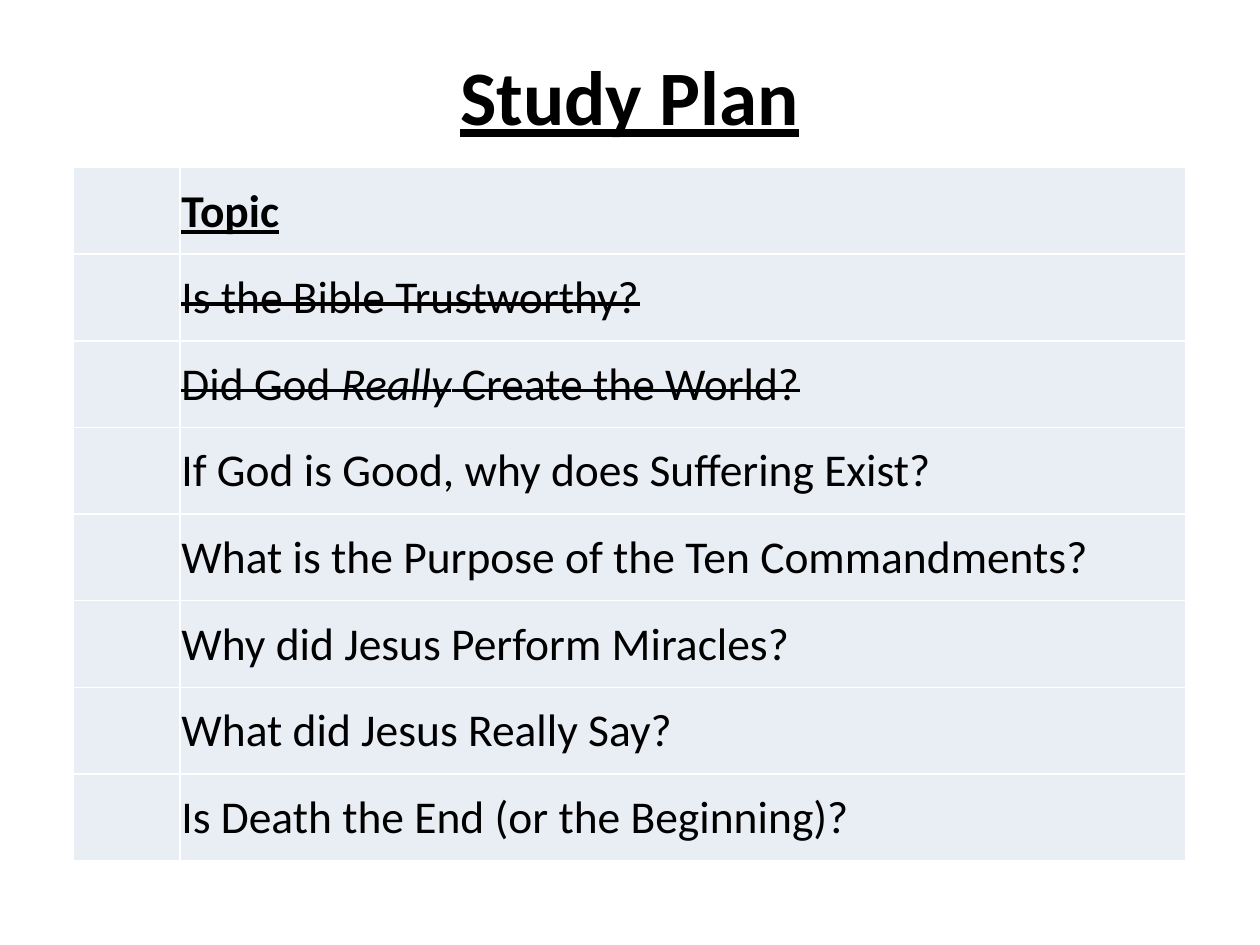
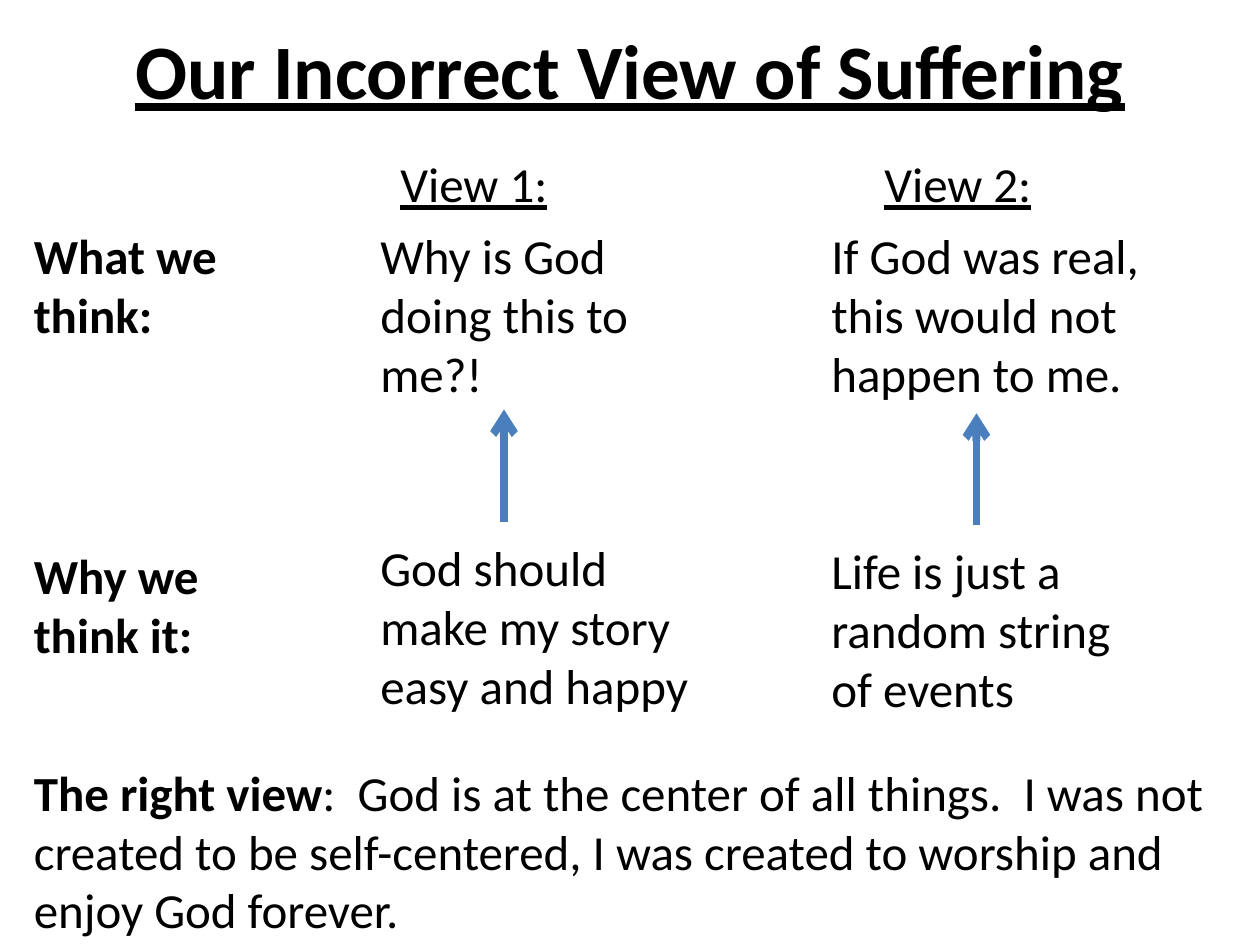
from lxml import etree
from pptx import Presentation
from pptx.dml.color import RGBColor
from pptx.enum.shapes import MSO_CONNECTOR
from pptx.enum.text import MSO_ANCHOR, MSO_AUTO_SIZE, PP_ALIGN
from pptx.oxml.ns import qn
from pptx.util import Inches, Pt

FONT = "Calibri"
BLACK, WHITE, CELL_FILL, ARROW_BLUE = "000000", "FFFFFF", "E9EDF4", "4B7EBC"
PLAIN = {"bold": False, "underline": False, "italic": False}
BOLD = PLAIN | {"bold": True}
UNDERLINED = PLAIN | {"underline": True}
HEADING = PLAIN | {"bold": True, "underline": True}
ITALIC = PLAIN | {"italic": True}


def color(hex_value):
    return RGBColor.from_string(hex_value)


def write(frame, size, runs, struck=False):
    for words, style in runs:
        run = frame.paragraphs[0].add_run()
        run.text = words
        for key, value in (style | {"name": FONT, "size": Pt(size)}).items():
            setattr(run.font, key, value)
        run.font.color.rgb = color(BLACK)
        if struck:
            run.font._element.set("strike", "sngStrike")


deck = Presentation()
deck.slide_width, deck.slide_height = Inches(10), Inches(7.5)

# Titles: the same style on both slides
slides = []
for heading, place in [
    ("Study Plan", (2.75, 0.25, 4.5, 1)),
    ("Our Incorrect View of Suffering", (0.5, -0.08, 9, 1.25)),
]:
    slide = deck.slides.add_slide(deck.slide_layouts[5])
    title = slide.shapes.title
    title.left, title.top, title.width, title.height = map(Inches, place)
    title.text_frame.vertical_anchor = MSO_ANCHOR.MIDDLE
    title.text_frame.auto_size = MSO_AUTO_SIZE.NONE
    title.text_frame.paragraphs[0].alignment = PP_ALIGN.CENTER
    write(title.text_frame, 44, [(heading, HEADING)])
    slides.append(slide)
study_plan, suffering = slides

# Study plan: one topic per row, finished ones struck through
topics = [
    ([("Topic", HEADING)], False),
    ([("Is the Bible Trustworthy?", PLAIN)], True),
    ([("Did God ", PLAIN), ("Really", ITALIC), (" Create the World?", PLAIN)], True),
    ([("If God is Good, why does Suffering Exist?", PLAIN)], False),
    ([("What is the Purpose of the Ten Commandments?", PLAIN)], False),
    ([("Why did Jesus Perform Miracles?", PLAIN)], False),
    ([("What did Jesus Really Say?", PLAIN)], False),
    ([("Is Death the End (or the Beginning)?", PLAIN)], False),
]
plan = study_plan.shapes.add_table(
    len(topics), 2, Inches(0.58), Inches(1.33), Inches(8.83), Inches(5.5)).table
plan.first_row = plan.horz_banding = False
plan.columns[0].width, plan.columns[1].width = Inches(0.85), Inches(7.98)
for row, (runs, finished) in enumerate(topics):
    write(plan.cell(row, 1).text_frame, 26, runs, finished)

cell_format = {
    "vertical_anchor": MSO_ANCHOR.MIDDLE, "margin_left": Inches(0.01),
    "margin_right": Inches(0.01), "margin_top": Inches(0.01), "margin_bottom": 0,
}
for cell in plan.iter_cells():
    for key, value in cell_format.items():
        setattr(cell, key, value)
    cell.fill.solid()
    cell.fill.fore_color.rgb = color(CELL_FILL)
    properties = cell._tc.get_or_add_tcPr()
    for index, side in enumerate(("lnL", "lnR", "lnT", "lnB")):
        border = etree.Element(qn(f"a:{side}"), w=str(Pt(1)))
        paint = etree.SubElement(border, qn("a:solidFill"))
        etree.SubElement(paint, qn("a:srgbClr"), val=WHITE)
        properties.insert(index, border)

# Views of suffering: a label column and two view columns
LABELS, VIEW_1, VIEW_2 = 0.17, 2.92, 6.5
HEADS, THOUGHTS = 1.17, 1.74
passages = [
    (LABELS, THOUGHTS, 1.75, 1.04, [("What we think:", BOLD)]),
    (LABELS, 4.28, 1.75, 1.04, [("Why we think it:", BOLD)]),
    (VIEW_1, THOUGHTS, 2.25, 1.51, [("Why is God doing this to me?!", PLAIN)]),
    (VIEW_2, THOUGHTS, 2.67, 1.51, [("If God was real, this would not happen to me.", PLAIN)]),
    (VIEW_1, 4.22, 2.67, 1.51, [("God should make my story easy and happy", PLAIN)]),
    (VIEW_2, 4.24, 2.67, 1.51, [("Life is just a random string of events", PLAIN)]),
    (3.08, HEADS, 1.75, 0.57, [("View 1:", UNDERLINED)]),
    (6.92, HEADS, 1.75, 0.57, [("View 2:", UNDERLINED)]),
    (LABELS, 6, 9.58, 1.51, [
        ("The right view", BOLD),
        (":  God is at the center of all things.  I was not created to be "
         "self-centered, I was created to worship and enjoy God forever.", PLAIN)]),
]
for left, top, width, height, runs in passages:
    passage = suffering.shapes.add_textbox(*map(Inches, (left, top, width, height)))
    passage.text_frame.word_wrap = True
    passage.text_frame.auto_size = MSO_AUTO_SIZE.SHAPE_TO_FIT_TEXT
    write(passage.text_frame, 28, runs)

# Arrows from each reason up to its thought
for x, tip in [(4, 3.25), (7.75, 3.28)]:
    arrow = suffering.shapes.add_connector(
        MSO_CONNECTOR.STRAIGHT, *map(Inches, (x, tip + 0.89, x, tip)))
    arrow.line.color.rgb = color(ARROW_BLUE)
    arrow.line.width = Pt(4.5)
    etree.SubElement(arrow.line._get_or_add_ln(), qn("a:tailEnd"), type="arrow")
    etree.SubElement(arrow._element.spPr, qn("a:effectLst"))

deck.save("out.pptx")
